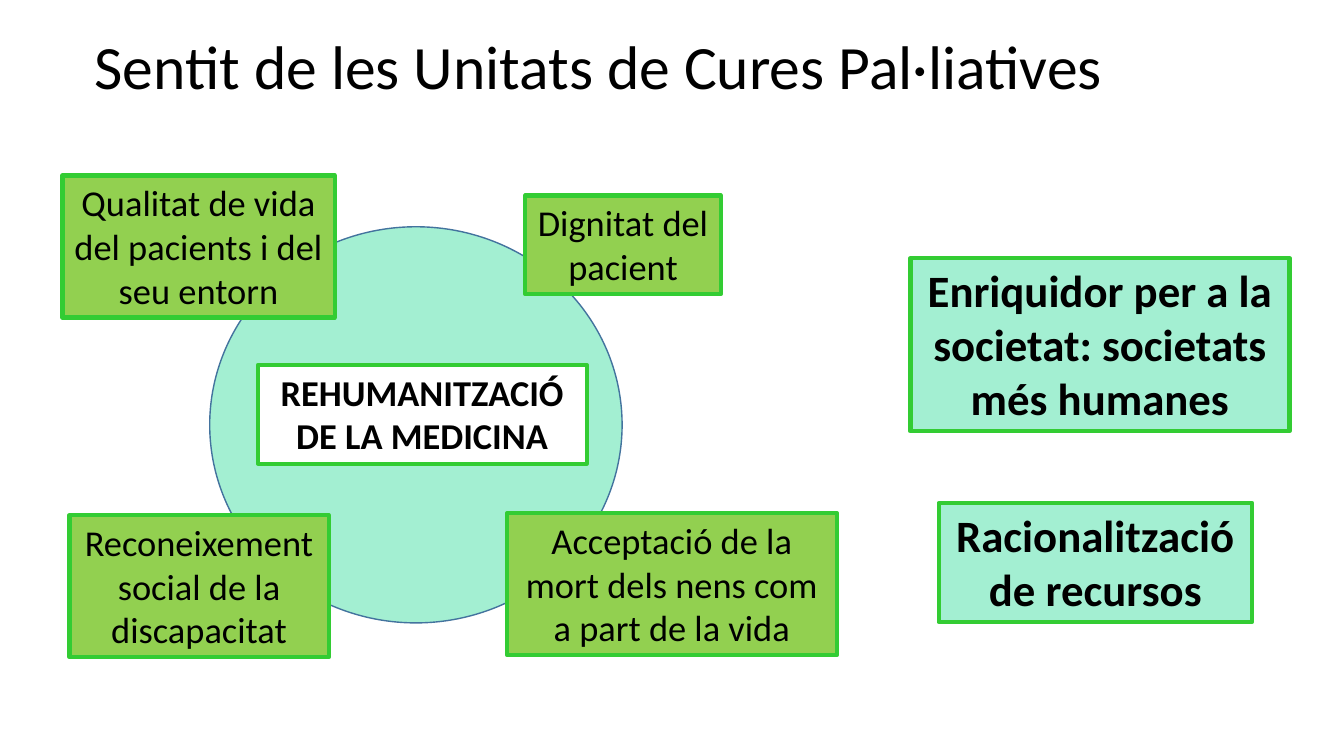
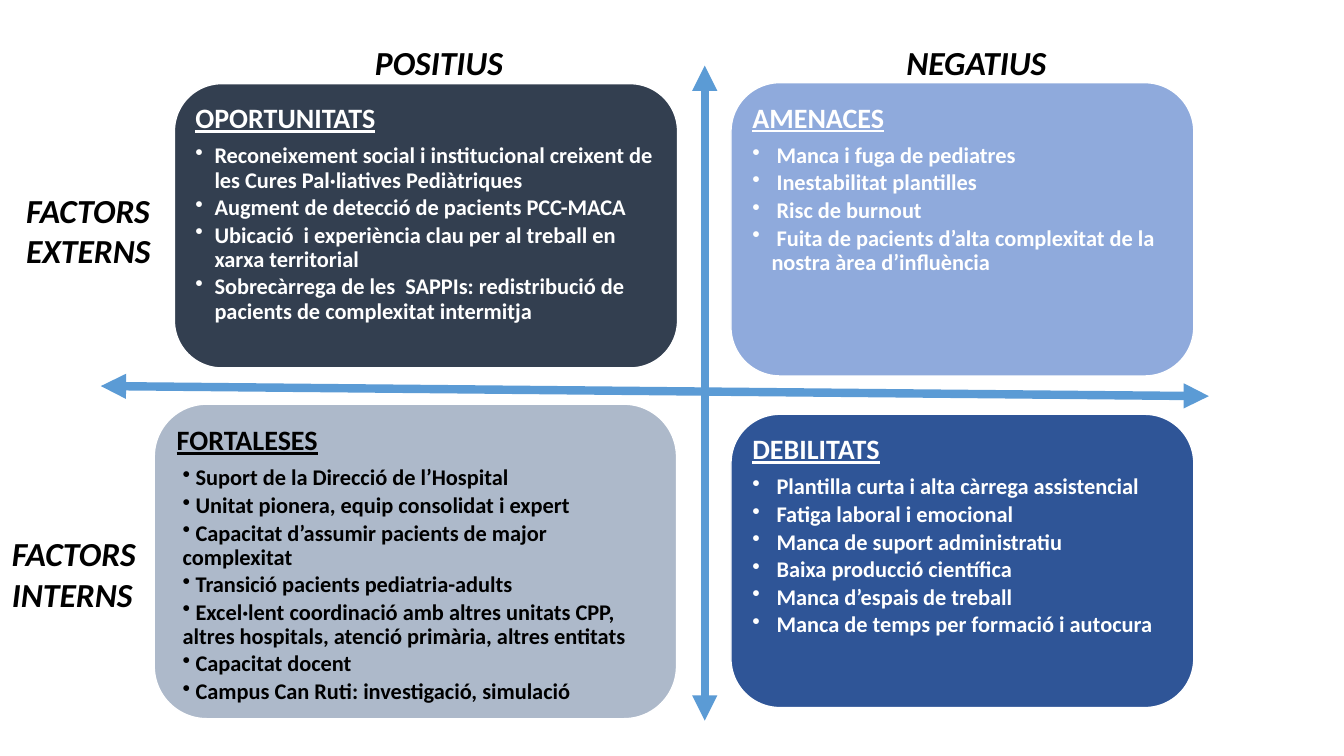
"""Build two slides: the purpose of palliative care units and their four-quadrant analysis."""
import pptx
import pptx.dml.color
import pptx.enum.shapes
import pptx.enum.text
import pptx.oxml
import pptx.oxml.ns
import pptx.util


class Theme:
    font = "Calibri"
    black, white = "000000", "FFFFFF"
    mint, lime, green, ring = "A3EFD2", "92D050", "33CC33", "43739E"
    slate, silver, sky, navy, arrow = "333F50", "ADB9CA", "8FAADC", "2F5597", "5B9BD5"
    title = {"size": 44}
    note = {"size": 26}
    core = {"size": 26, "bold": True}
    outcome = {"size": 32, "bold": True}
    axis = {"size": 24, "bold": True, "italic": True}
    heading = {"size": 20, "bold": True, "underline": True}
    item = {"size": 16, "bold": True}


PX = 9144
SHAPE = pptx.enum.shapes.MSO_SHAPE
ALIGN = pptx.enum.text.PP_ALIGN
FIT = pptx.enum.text.MSO_AUTO_SIZE
TOP = pptx.enum.text.MSO_ANCHOR.TOP
rgb = pptx.dml.color.RGBColor.from_string
qn = pptx.oxml.ns.qn


def add_box(s, at, kind=None, fill=None, line=None, weight=1, fit=FIT.SHAPE_TO_FIT_TEXT):
    at = [v * PX for v in at]
    if kind is None:
        sp = s.shapes.add_textbox(*at)
    else:
        sp = s.shapes.add_shape(kind, *at)
        sp.shadow.inherit = False
        sp.fill.solid()
        sp.fill.fore_color.rgb = rgb(fill)
        sp.line.color.rgb = rgb(line)
        sp.line.width = pptx.util.Pt(weight)
    for name, value in {"word_wrap": True, "auto_size": fit, "vertical_anchor": TOP}.items():
        setattr(sp.text_frame, name, value)
    return sp.text_frame


def write(p, text, style, color=Theme.black, **layout):
    for name, value in {"alignment": ALIGN.LEFT, **layout}.items():
        setattr(p, name, value)
    r = p.add_run()
    r.text = text
    for name, value in {**style, "size": pptx.util.Pt(style["size"]), "name": Theme.font}.items():
        setattr(r.font, name, value)
    r.font.color.rgb = rgb(color)


prs = pptx.Presentation()
prs.slide_width, prs.slide_height = 1333 * PX, 750 * PX
blank = prs.slide_layouts[6]

s = prs.slides.add_slide(blank)
add_box(s, (208, 225, 409, 393), SHAPE.OVAL, Theme.mint, Theme.ring, fit=FIT.NONE)
tf = add_box(s, (84, 31, 1150, 145), fit=FIT.NONE)
write(tf.paragraphs[0], "Sentit de les Unitats de Cures Pal·liatives", Theme.title, line_spacing=0.9)

cards = [
    ((256, 362, 326, 98), Theme.white, Theme.core, "REHUMANITZACIÓ DE LA MEDICINA"),
    ((62, 174, 270, 141), Theme.lime, Theme.note, "Qualitat de vida del pacients i del seu entorn"),
    ((521, 194, 194, 98), Theme.lime, Theme.note, "Dignitat del pacient"),
    ((69, 511, 257, 141), Theme.lime, Theme.note, "Reconeixement social de la discapacitat"),
    ((503, 509, 327, 141), Theme.lime, Theme.note, "Acceptació de la mort dels nens com a part de la vida"),
    ((903, 256, 376, 172), Theme.mint, Theme.outcome, "Enriquidor per a la societat: societats més humanes"),
    ((931, 499, 311, 118), Theme.mint, Theme.outcome, "Racionalització de recursos"),
]
for at, fill, style, text in cards:
    tf = add_box(s, at, SHAPE.RECTANGLE, fill, Theme.green, 3)
    write(tf.paragraphs[0], text, style, alignment=ALIGN.CENTER)

s = prs.slides.add_slide(blank)
hanging, inline = (19, -19), (6, 0)
quadrants = [
    ((173, 83, 499, 282), Theme.slate, Theme.white, hanging, "OPORTUNITATS", [
        "Reconeixement social i institucional creixent de les Cures Pal·liatives Pediàtriques",
        "Augment de detecció de pacients PCC-MACA",
        "Ubicació  i experiència clau per al treball en xarxa territorial",
        "Sobrecàrrega de les  SAPPIs: redistribució de pacients de complexitat intermitja",
    ]),
    ((153, 401, 518, 312), Theme.silver, Theme.black, inline, "FORTALESES", [
        " Suport de la Direcció de l’Hospital",
        " Unitat pionera, equip consolidat i expert",
        " Capacitat d’assumir pacients de major complexitat",
        " Transició pacients pediatria-adults",
        " Excel·lent coordinació amb altres unitats CPP, altres hospitals, atenció primària, altres entitats",
        " Capacitat docent",
        " Campus Can Ruti: investigació, simulació",
    ]),
    ((725, 82, 459, 291), Theme.sky, Theme.white, hanging, "AMENACES", [
        " Manca i fuga de pediatres",
        " Inestabilitat plantilles",
        " Risc de burnout",
        " Fuita de pacients d’alta complexitat de la nostra àrea d’influència",
    ]),
    ((725, 411, 459, 291), Theme.navy, Theme.white, hanging, "DEBILITATS", [
        " Plantilla curta i alta càrrega assistencial",
        " Fatiga laboral i emocional",
        " Manca de suport administratiu",
        " Baixa producció científica",
        " Manca d’espais de treball",
        " Manca de temps per formació i autocura",
    ]),
]
for at, fill, color, (margin, indent), heading, items in quadrants:
    tf = add_box(s, at, SHAPE.ROUNDED_RECTANGLE, fill, Theme.white, fit=FIT.NONE)
    for side in ("left", "top", "right", "bottom"):
        setattr(tf, f"margin_{side}", 7 * PX)
    write(tf.paragraphs[0], heading, Theme.heading, color, line_spacing=0.9, space_after=pptx.util.Pt(7))
    for text in items:
        p = tf.add_paragraph()
        pPr = p._p.get_or_add_pPr()
        pPr.set("marL", str(margin * PX))
        pPr.set("indent", str(indent * PX))
        bullet = pptx.oxml.parse_xml(f'<a:buChar {pptx.oxml.ns.nsdecls("a")} char="•"/>')
        pPr.append(bullet)
        write(p, text, Theme.item, color, level=1, line_spacing=0.9, space_after=pptx.util.Pt(2.4))

for ends in [(699, 65, 699, 715), (1199, 393, 100, 383)]:
    cx = s.shapes.add_connector(pptx.enum.shapes.MSO_CONNECTOR.STRAIGHT, *[v * PX for v in ends])
    cx.line.color.rgb = rgb(Theme.arrow)
    cx.line.width = pptx.util.Pt(6)
    spPr = cx._element.spPr
    ln = spPr.find(qn("a:ln"))
    for tag in ("headEnd", "tailEnd"):
        ln.append(pptx.oxml.parse_xml(f'<a:{tag} {pptx.oxml.ns.nsdecls("a")} type="triangle"/>'))
    spPr.append(pptx.oxml.parse_xml(f'<a:effectLst {pptx.oxml.ns.nsdecls("a")}/>'))

labels = [
    ((362, 37, 178, 50), "POSITIUS"),
    ((889, 37, 178, 50), "NEGATIUS"),
    ((16, 183, 197, 91), "FACTORS EXTERNS"),
    ((2, 524, 197, 91), "FACTORS INTERNS"),
]
for at, text in labels:
    write(add_box(s, at).paragraphs[0], text, Theme.axis)

prs.save("out.pptx")
